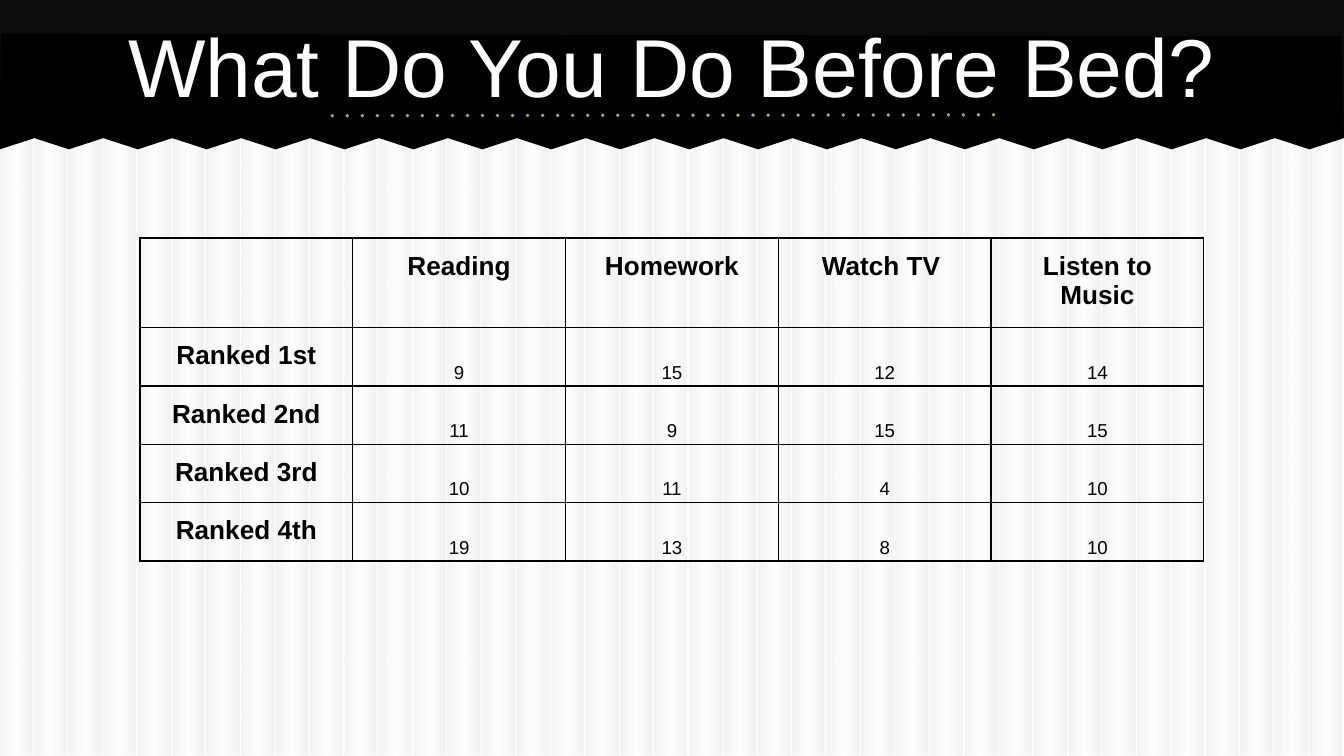
from pptx import Presentation
from pptx.dml import color
from pptx.enum import shapes, text
from pptx.oxml import ns, parse_xml
from pptx.util import Pt

WIDTH, HEIGHT = 720, 405
STEPS = 39
FONT = "Arial"
BLACK, WHITE = "000000", "FFFFFF"
HEADINGS = ["", "Reading", "Homework", "Watch TV ", "Listen to Music"]
RANKINGS = [
    ["Ranked 1st", 9, 15, 12, 14],
    ["Ranked 2nd", 11, 9, 15, 15],
    ["Ranked 3rd", 10, 11, 4, 10],
    ["Ranked 4th", 19, 13, 8, 10],
]


def rgb(value):
    """Return the colour for a hex string."""
    return color.RGBColor.from_string(value)


def style_text(para, size, colour, bold=False):
    """Centre a paragraph and format its runs."""
    para.alignment = text.PP_ALIGN.CENTER
    for span in para.runs:
        span.font.name = FONT
        span.font.size = Pt(size)
        span.font.bold = bold
        span.font.color.rgb = rgb(colour)


def add_rectangle(page, left, top, width, height):
    """Add a rectangle without line or shadow."""
    box = page.shapes.add_shape(
        shapes.MSO_SHAPE.RECTANGLE, Pt(left), Pt(top), Pt(width), Pt(height))
    box.shadow.inherit = False
    box.line.fill.background()
    return box


def add_stripes(page, left, top, width, height):
    """Cover a box with equal, faint gradient stripes."""
    pitch = width / STEPS
    stops = "".join(
        f'<a:gs pos="{place}"><a:srgbClr val="{shade}"><a:alpha val="19000"/></a:srgbClr></a:gs>'
        for place, shade in [(0, "BFBFBF"), (50000, WHITE), (97000, "BFBFBF"), (100000, "BFBFBF")])
    for index in range(STEPS):
        stripe = add_rectangle(page, left + index * pitch, top, 17.3, height)
        stripe.fill.background()
        empty_fill = stripe._element.spPr.find(ns.qn("a:noFill"))
        gradient = parse_xml(
            f'<a:gradFill {ns.nsdecls("a")} rotWithShape="1"><a:gsLst>{stops}</a:gsLst>'
            '<a:lin ang="0" scaled="0"/></a:gradFill>')
        stripe._element.spPr.replace(empty_fill, gradient)


def add_banner(page, left, top, width, height):
    """Add the dark banner with its torn edge, dotted rule and title."""
    band = add_rectangle(page, left, top, width, 73.5)
    band.fill.solid()
    band.fill.fore_color.rgb = rgb("0C0C0C")

    bottom = top + height
    teeth = [(Pt(left + width * index / STEPS), Pt(bottom - 6 * (index % 2)))
             for index in reversed(range(STEPS + 1))]
    builder = page.shapes.build_freeform(Pt(left + 0.5), Pt(top + 18))
    builder.add_line_segments([(Pt(left + width - 1.5), Pt(top + 19.5)), *teeth])
    edge = builder.convert_to_shape()
    edge.shadow.inherit = False
    edge.fill.solid()
    edge.fill.fore_color.rgb = rgb(BLACK)
    edge.line.fill.background()

    rule = page.shapes.add_connector(
        shapes.MSO_CONNECTOR.STRAIGHT,
        Pt(left + 178), Pt(top + 62), Pt(left + 540), Pt(top + 61.5))
    rule.line.color.rgb = rgb("94AE8E")
    rule.line.width = Pt(2)
    line = rule._element.spPr.find(ns.qn("a:ln"))
    line.set("cap", "rnd")
    line.append(parse_xml(f'<a:prstDash {ns.nsdecls("a")} val="dot"/>'))
    rule._element.spPr.append(parse_xml(f'<a:effectLst {ns.nsdecls("a")}/>'))

    title = page.shapes.add_textbox(Pt(left + 36), Pt(top + 0.7), Pt(width - 72), Pt(67.7))
    frame = title.text_frame
    frame.word_wrap = True
    frame.vertical_anchor = text.MSO_ANCHOR.MIDDLE
    frame.margin_left = frame.margin_right = frame.margin_top = frame.margin_bottom = Pt(7.2)
    frame.text = "What Do You Do Before Bed?"
    style_text(frame.paragraphs[0], 44, WHITE)


def style_cell(cell, is_label):
    """Give a cell its borders, margins and text style."""
    properties = cell._tc.get_or_add_tcPr()
    for side in ["lnL", "lnR", "lnT", "lnB"]:
        properties.append(parse_xml(
            f'<a:{side} {ns.nsdecls("a")} w="{Pt(0.75)}"><a:solidFill>'
            f'<a:srgbClr val="{BLACK}"/></a:solidFill></a:{side}>'))
    cell.fill.background()
    across, down = (7.2, 7.2) if is_label else (2.25, 1.5)
    cell.margin_left = cell.margin_right = Pt(across)
    cell.margin_top = cell.margin_bottom = Pt(down)
    para = cell.text_frame.paragraphs[0]
    if is_label:
        style_text(para, 14, BLACK, bold=True)
    else:
        cell.vertical_anchor = text.MSO_ANCHOR.BOTTOM
        para.line_spacing = 1.15
        style_text(para, 10, BLACK)


def add_rankings(page, left, top, width, height):
    """Add the table of ranked activities."""
    rows = [HEADINGS, *RANKINGS]
    table = page.shapes.add_table(
        len(rows), len(HEADINGS), Pt(left), Pt(top), Pt(width), Pt(height)).table
    table.first_row = table.horz_banding = False
    header = 45.6
    for index, row in enumerate(table.rows):
        row.height = Pt((height - header) / len(RANKINGS) if index else header)
    for row_index, values in enumerate(rows):
        for column_index, value in enumerate(values):
            cell = table.cell(row_index, column_index)
            cell.text = str(value)
            style_cell(cell, row_index == 0 or column_index == 0)


def main():
    """Build and save the deck."""
    deck = Presentation()
    deck.slide_width, deck.slide_height = Pt(WIDTH), Pt(HEIGHT)
    page = deck.slides.add_slide(deck.slide_layouts[6])
    page.background.fill.solid()
    page.background.fill.fore_color.rgb = rgb(WHITE)
    add_stripes(page, 0, 0.5, WIDTH, HEIGHT - 0.5)
    add_banner(page, 0, 0, WIDTH, 80)
    add_rankings(page, 75, 127.5, 570, 166.2)
    deck.save("out.pptx")


if __name__ == "__main__":
    main()
